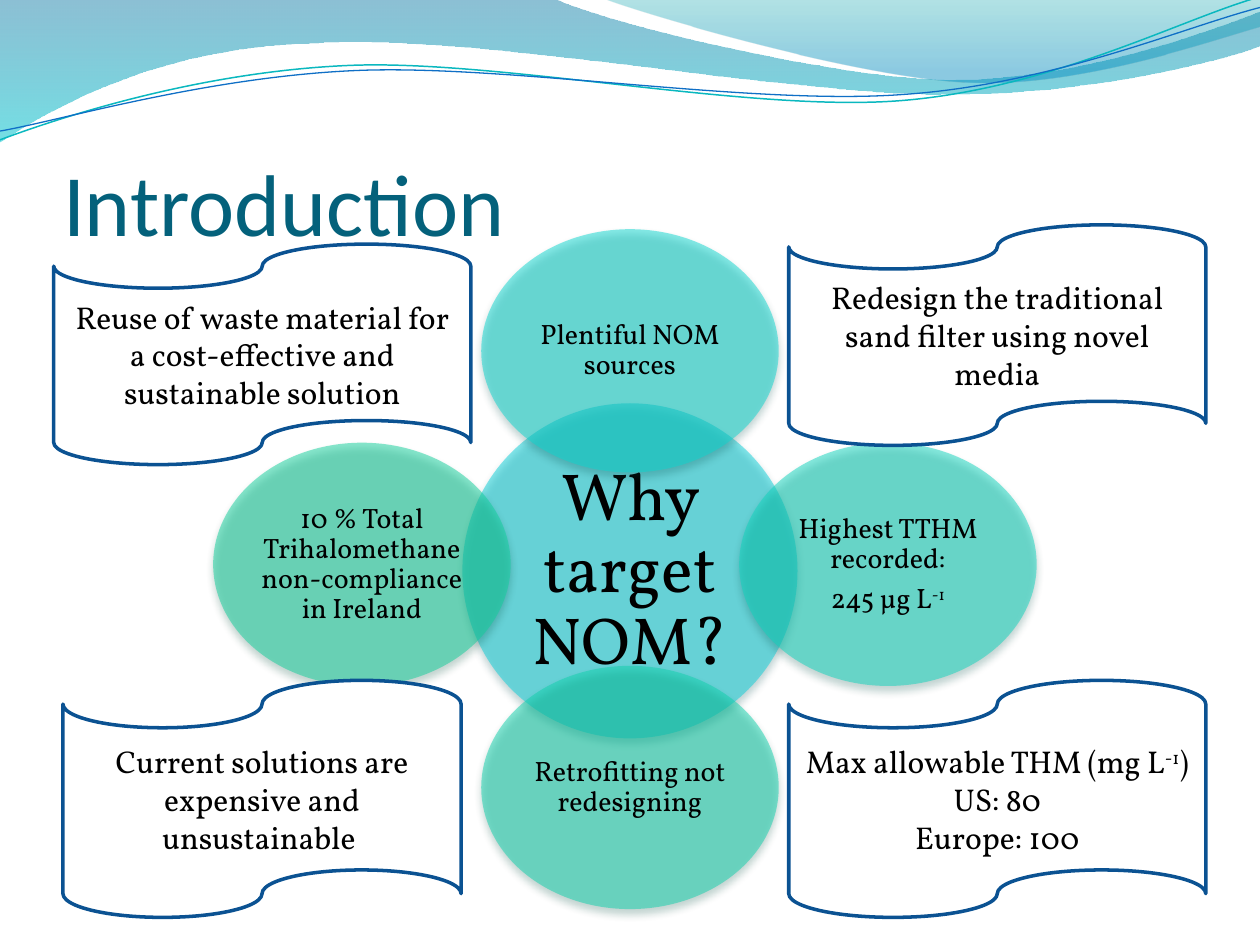
from math import cos, radians, sin

from lxml import etree
from pptx import Presentation
from pptx.dml.color import RGBColor
from pptx.enum.shapes import MSO_SHAPE
from pptx.enum.text import MSO_ANCHOR, PP_ALIGN
from pptx.oxml.ns import qn
from pptx.util import Pt


def paint(color, code, alpha=100):
    """Set a colour from a hex string."""
    color.rgb = RGBColor.from_string(code)
    if alpha < 100:
        node = color._xFill.find(qn("a:srgbClr"))
        etree.SubElement(node, qn("a:alpha")).set("val", str(alpha * 1000))


def write(shape, text, size):
    """Centre lines of text; parts between carets are superscript."""
    frame = shape.text_frame
    frame.word_wrap = True
    frame.vertical_anchor = MSO_ANCHOR.MIDDLE
    for i, line in enumerate(text.split("\n")):
        para = frame.paragraphs[0] if i == 0 else frame.add_paragraph()
        para.alignment = PP_ALIGN.CENTER
        for j, part in enumerate(line.split("^")):
            run = para.add_run()
            run.text = part
            run.font.size = Pt(size)
            run.font.name = "Vollkorn"
            paint(run.font.color, "000000")
            if j % 2:
                run.font._element.set("baseline", "30000")


deck = Presentation()
deck.slide_width, deck.slide_height = Pt(720), Pt(540)
slide = deck.slides.add_slide(deck.slide_layouts[5])
shapes = slide.shapes

# Waves at the top: one point is a straight step, three are a curve
broad = [
    [(0, 0)], [(316.8, -0.7)],
    [(342.7, 12.2), (478.1, 45.4), (545.8, 45.4)],
    [(614.2, 45.4), (689.8, 18.7), (720, 6.5)],
    [(720.7, 25.9)],
    [(707.8, 31.7), (626.4, 54.7), (537.1, 54)],
    [(447.8, 54), (275, 20.2), (185, 24.5)],
    [(92.9, 25.9), (33.1, 59.8), (-0.7, 81.4)],
    [(0, 0)],
]
small = [
    [(344.9, -0.7)],
    [(366.5, 7.9), (491, 44.6), (553.7, 46.8)],
    [(616.3, 49.7), (691.9, 23), (720, 15.1)],
    [(720, 0)], [(344.9, -0.7)],
]
teal = [
    [(0, 79.9)],
    [(34.6, 67), (113.8, 41), (199.4, 37.4)],
    [(284.4, 33.8), (427, 64.1), (513.4, 57.6)],
    [(599.8, 51.1), (675.4, 10.8), (718.6, -1.4)],
]
blue = [
    [(0, 74.9)],
    [(33.8, 69.1), (118.1, 43.9), (203.8, 40.3)],
    [(290.2, 36.7), (429.8, 60.5), (516.2, 54)],
    [(601.9, 48.2), (677.5, 15.1), (720, 4.3)],
]
# Steps, gradient stops, line, tilt and centre of the tilt
waves = [
    (broad, [(0, "0074A1", 45), (1, "00C6CF", 55)], None, 0, (0, 0)),
    (small, [(0, "00A1A9", 30), (0.8, "008BBF", 45)], None, 0, (0, 0)),
    (teal, None, ("0AB8BF", 0.85), 2.7, (359.3, 41.4)),
    (blue, None, ("0F6FC6", 0.75), 2.7, (359.6, 42.5)),
]
for steps, stops, line, tilt, (mx, my) in waves:
    c, s = cos(radians(tilt)), sin(radians(tilt))
    spots = [(Pt(mx + (x - mx) * c - (y - my) * s), Pt(my + (x - mx) * s + (y - my) * c))
             for step in steps for x, y in step]
    pen = shapes.build_freeform(*spots[0], scale=1.0)
    pen.add_line_segments(spots[1:], close=stops is not None)
    wave = pen.convert_to_shape()
    wave.rotation = -tilt % 360
    wave.shadow.inherit = False
    # Turn each three-point step into one curve
    track = wave.element.find(".//" + qn("a:path"))
    nodes = iter(track.findall(qn("a:lnTo")))
    for step in steps[1:]:
        part = [next(nodes) for _ in step]
        if len(part) == 3:
            curve = etree.Element(qn("a:cubicBezTo"))
            part[0].addprevious(curve)
            for node in part:
                curve.append(node[0])
                track.remove(node)
    if stops:
        wave.fill.gradient()
        wave.fill.gradient_angle = 270
        for stop, (place, code, alpha) in zip(wave.fill.gradient_stops, stops):
            stop.position = place
            paint(stop.color, code, alpha)
        wave.line.fill.background()
    else:
        wave.fill.background()
        paint(wave.line.color, line[0])
        wave.line.width = Pt(line[1])

# Title
title = shapes.title
title.left, title.top, title.width, title.height = Pt(36), Pt(55.4), Pt(648), Pt(90)
frame = title.text_frame
frame.text = "Introduction"
frame.vertical_anchor = MSO_ANCHOR.BOTTOM
frame.margin_left = frame.margin_right = frame.margin_bottom = 0
frame.paragraphs[0].alignment = PP_ALIGN.LEFT
font = frame.paragraphs[0].runs[0].font
font.size, font.name = Pt(50), "Calibri"
paint(font.color, "04617B")

# Circles: centre x and y, width, height, fill, shadow, size, inset, text
wide, high = 170, 139
circles = [
    (360, 326.2, 191.5, 191.5, "0BD0D9", "024B4E", 38, 3.8, "Why target NOM?"),
    (360, 200.5, wide, high, "0CD6CF", "034D4A", 16, 1.6, "Plentiful NOM sources"),
    (507.4, 322.5, wide, high, "0ED4BD", "034C44", 16, 1.6,
     "Highest TTHM recorded:\n245 µg L^-1^"),
    (360, 450, wide, high, "0FD1AC", "034B3D", 16, 1.6, "Retrofitting not redesigning"),
    (206.8, 322.5, wide, high, "10CF9B", "044A37", 16, 1.6,
     "10 % Total Trihalomethane non-compliance in Ireland"),
]
for x, y, w, h, code, dark, size, inset, text in circles:
    disc = shapes.add_shape(MSO_SHAPE.OVAL, Pt(x - w / 2), Pt(y - h / 2), Pt(w), Pt(h))
    disc.fill.solid()
    paint(disc.fill.fore_color, code, 50)
    disc.line.fill.background()
    disc.shadow.inherit = False
    glow = etree.SubElement(
        disc.element.spPr.find(qn("a:effectLst")), qn("a:outerShdw"),
        blurRad=str(Pt(4.5)), dist=str(Pt(3)), dir="5400000", rotWithShape="0")
    shade = etree.SubElement(glow, qn("a:srgbClr"), val=dark)
    etree.SubElement(shade, qn("a:alpha"), val="48000")
    # The label fills the largest box inside the circle
    w, h = w * 0.71, h * 0.71
    label = shapes.add_textbox(Pt(x - w / 2), Pt(y - h / 2), Pt(w), Pt(h))
    write(label, text, size)
    frame = label.text_frame
    frame.margin_left = frame.margin_right = Pt(inset)
    frame.margin_top = frame.margin_bottom = Pt(inset)
    for para in frame.paragraphs:
        para.line_spacing = 0.9
        para.space_after = Pt(size * 0.35)

# Banners
banners = [
    (450.7, 388.8, 238.3, 135.4, "Max allowable THM (mg L^-1^)\nUS: 80\nEurope: 100"),
    (36, 388.8, 227.5, 135.4, "Current solutions are expensive and unsustainable "),
    (30.7, 139.5, 238.3, 126,
     "Reuse of waste material for a cost-effective and sustainable solution"),
    (450.7, 128.5, 238.3, 126, "Redesign the traditional sand filter using novel media"),
]
for x, y, w, h, text in banners:
    tape = shapes.add_shape(MSO_SHAPE.FLOWCHART_PUNCHED_TAPE, Pt(x), Pt(y), Pt(w), Pt(h))
    tape.shadow.inherit = False
    tape.fill.solid()
    paint(tape.fill.fore_color, "FFFFFF")
    paint(tape.line.color, "0B5292")
    tape.line.width = Pt(2)
    write(tape, text, 18)

deck.save("out.pptx")
